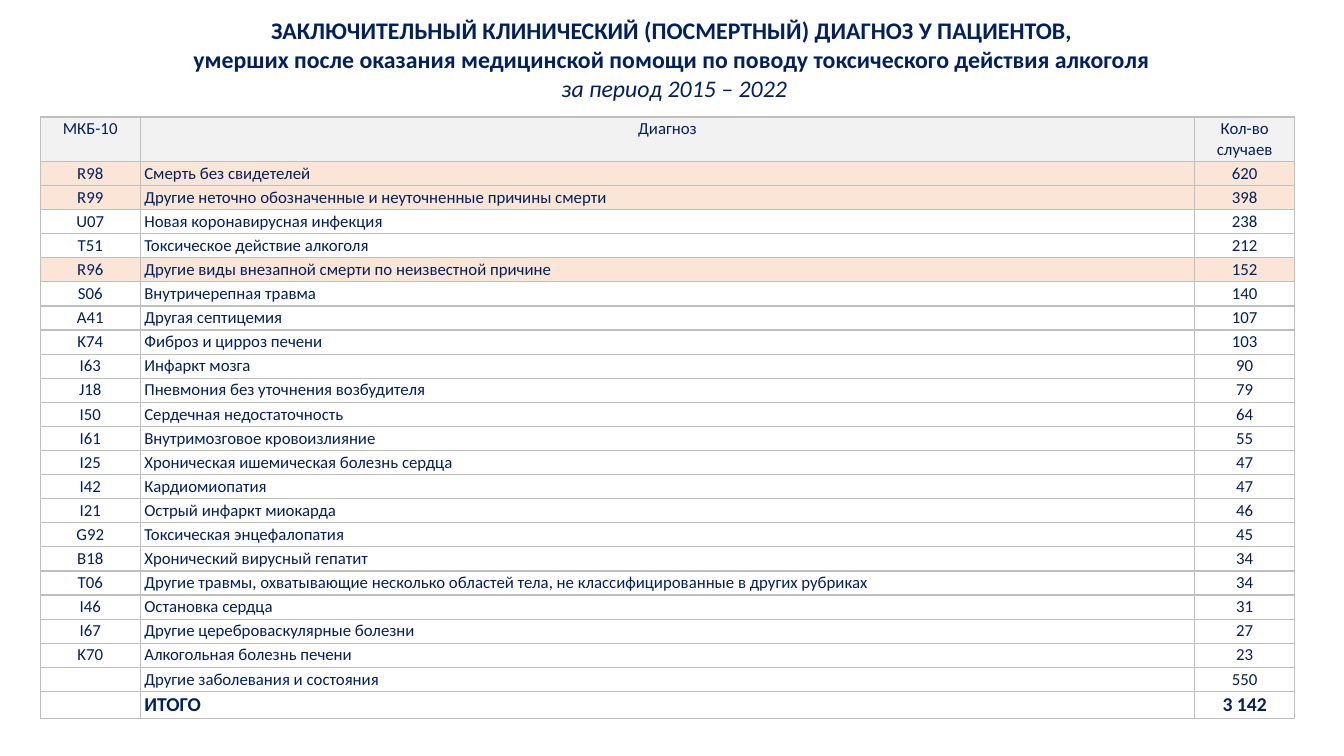
from typing import NamedTuple

from lxml.etree import SubElement
from pptx import Presentation
from pptx.dml.color import RGBColor
from pptx.enum.text import MSO_ANCHOR, MSO_AUTO_SIZE, PP_ALIGN
from pptx.oxml.ns import qn
from pptx.slide import Slide
from pptx.table import Table, _Cell
from pptx.util import Inches, Length, Pt

NAVY = RGBColor(0x00, 0x20, 0x60)
WHITE = RGBColor(0xFF, 0xFF, 0xFF)
HEADER_GREY = RGBColor(0xF2, 0xF2, 0xF2)
PEACH = RGBColor(0xFB, 0xE5, 0xD6)
BORDER_GREY = RGBColor(0xBF, 0xBF, 0xBF)

FONT_NAME = "Calibri"
SLIDE_WIDTH, SLIDE_HEIGHT = Inches(13.33), Inches(7.5)

# Percentages of the slide's width and height
TITLE_BOX = (4.95, 1.47, 90.45, 12.8)
TABLE_LEFT, TABLE_TOP = 3, 15.47
COLUMN_WIDTHS = (7.43, 78.47, 7.43)
HEADER_HEIGHT, BODY_HEIGHT, TOTAL_HEIGHT = 5.81, 3.19, 3.64

TITLE = (
    "ЗАКЛЮЧИТЕЛЬНЫЙ КЛИНИЧЕСКИЙ (ПОСМЕРТНЫЙ) ДИАГНОЗ У ПАЦИЕНТОВ, \n"
    "умерших после оказания медицинской помощи по поводу токсического действия алкоголя \n"
    "за период 2015 – 2022"
)


class DiagnosisRow(NamedTuple):
    code: str
    diagnosis: str
    cases: str
    fill: RGBColor = WHITE
    height: float = BODY_HEIGHT
    font_size: int = 12
    bold: bool = False
    diagnosis_alignment: PP_ALIGN = PP_ALIGN.LEFT


ROWS = [
    DiagnosisRow("МКБ-10", "Диагноз", "Кол-во\nслучаев", HEADER_GREY, HEADER_HEIGHT,
                 diagnosis_alignment=PP_ALIGN.CENTER),
    DiagnosisRow("R98", "Смерть без свидетелей", "620", PEACH),
    DiagnosisRow("R99", "Другие неточно обозначенные и неуточненные причины смерти", "398", PEACH),
    DiagnosisRow("U07", "Новая коронавирусная инфекция", "238"),
    DiagnosisRow("T51", "Токсическое действие алкоголя", "212"),
    DiagnosisRow("R96", "Другие виды внезапной смерти по неизвестной причине", "152", PEACH),
    DiagnosisRow("S06", "Внутричерепная травма", "140"),
    DiagnosisRow("A41", "Другая септицемия", "107"),
    DiagnosisRow("K74", "Фиброз и цирроз печени", "103"),
    DiagnosisRow("I63", "Инфаркт мозга", "90"),
    DiagnosisRow("J18", "Пневмония без уточнения возбудителя", "79"),
    DiagnosisRow("I50", "Сердечная недостаточность", "64"),
    DiagnosisRow("I61", "Внутримозговое кровоизлияние", "55"),
    DiagnosisRow("I25", "Хроническая ишемическая болезнь сердца", "47"),
    DiagnosisRow("I42", "Кардиомиопатия", "47"),
    DiagnosisRow("I21", "Острый инфаркт миокарда", "46"),
    DiagnosisRow("G92", "Токсическая энцефалопатия", "45"),
    DiagnosisRow("B18", "Хронический вирусный гепатит", "34"),
    DiagnosisRow("T06", "Другие травмы, охватывающие несколько областей тела, "
                 "не классифицированные в других рубриках", "34"),
    DiagnosisRow("I46", "Остановка сердца", "31"),
    DiagnosisRow("I67", "Другие цереброваскулярные болезни", "27"),
    DiagnosisRow("K70", "Алкогольная болезнь печени", "23"),
    DiagnosisRow("", "Другие заболевания и состояния", "550"),
    DiagnosisRow("", "ИТОГО", "3 142", height=TOTAL_HEIGHT, font_size=14, bold=True),
]


def across(percent: float) -> Length:
    return Length(round(SLIDE_WIDTH * percent / 100))


def down(percent: float) -> Length:
    return Length(round(SLIDE_HEIGHT * percent / 100))


def format_text(text_frame, size: float, bold: bool, alignment: PP_ALIGN) -> None:
    for paragraph in text_frame.paragraphs:
        paragraph.alignment = alignment
        paragraph.line_spacing = 1.0
        paragraph.space_before = Pt(0)
        for run in paragraph.runs:
            run.font.name = FONT_NAME
            run.font.size = Pt(size)
            run.font.bold = bold
            run.font.color.rgb = NAVY
        if not paragraph.runs:
            # An empty cell needs its own text size to keep the row low
            SubElement(paragraph._p, qn("a:endParaRPr"), sz=str(size * 100))


def add_title(slide: Slide) -> None:
    title = slide.shapes.title
    left, top, width, height = TITLE_BOX
    title.left, title.top = across(left), down(top)
    title.width, title.height = across(width), down(height)
    text_frame = title.text_frame
    text_frame.text = TITLE
    text_frame.word_wrap = True
    text_frame.auto_size = MSO_AUTO_SIZE.NONE
    text_frame.vertical_anchor = MSO_ANCHOR.TOP
    format_text(text_frame, 17, True, PP_ALIGN.CENTER)
    period_font = text_frame.paragraphs[-1].runs[0].font
    period_font.bold, period_font.italic = False, True


def add_borders(cell: _Cell) -> None:
    properties = cell._tc.get_or_add_tcPr()
    for side in ("lnL", "lnR", "lnT", "lnB"):
        line = SubElement(properties, qn(f"a:{side}"), w=str(Pt(1)))
        fill = SubElement(line, qn("a:solidFill"))
        SubElement(fill, qn("a:srgbClr"), val=str(BORDER_GREY))


def fill_row(table: Table, index: int, row: DiagnosisRow) -> None:
    table.rows[index].height = down(row.height)
    texts = (row.code, row.diagnosis, row.cases)
    alignments = (PP_ALIGN.CENTER, row.diagnosis_alignment, PP_ALIGN.CENTER)
    for column, (text, alignment) in enumerate(zip(texts, alignments)):
        cell = table.cell(index, column)
        cell.margin_left = cell.margin_right = Pt(3)
        cell.margin_top = cell.margin_bottom = Pt(1.25)
        cell.vertical_anchor = MSO_ANCHOR.TOP
        add_borders(cell)
        cell.fill.solid()
        cell.fill.fore_color.rgb = row.fill
        cell.text_frame.text = text
        format_text(cell.text_frame, row.font_size, row.bold, alignment)


def add_diagnosis_table(slide: Slide) -> None:
    table = slide.shapes.add_table(
        len(ROWS), len(COLUMN_WIDTHS), across(TABLE_LEFT), down(TABLE_TOP),
        across(sum(COLUMN_WIDTHS)), down(sum(row.height for row in ROWS)),
    ).table
    table.first_row = table.horz_banding = False
    for column, width in zip(table.columns, COLUMN_WIDTHS):
        column.width = across(width)
    for index, row in enumerate(ROWS):
        fill_row(table, index, row)


def main() -> None:
    presentation = Presentation()
    presentation.slide_width, presentation.slide_height = SLIDE_WIDTH, SLIDE_HEIGHT
    slide = presentation.slides.add_slide(presentation.slide_layouts.get_by_name("Title Only"))
    add_title(slide)
    add_diagnosis_table(slide)
    presentation.save("out.pptx")


if __name__ == "__main__":
    main()
